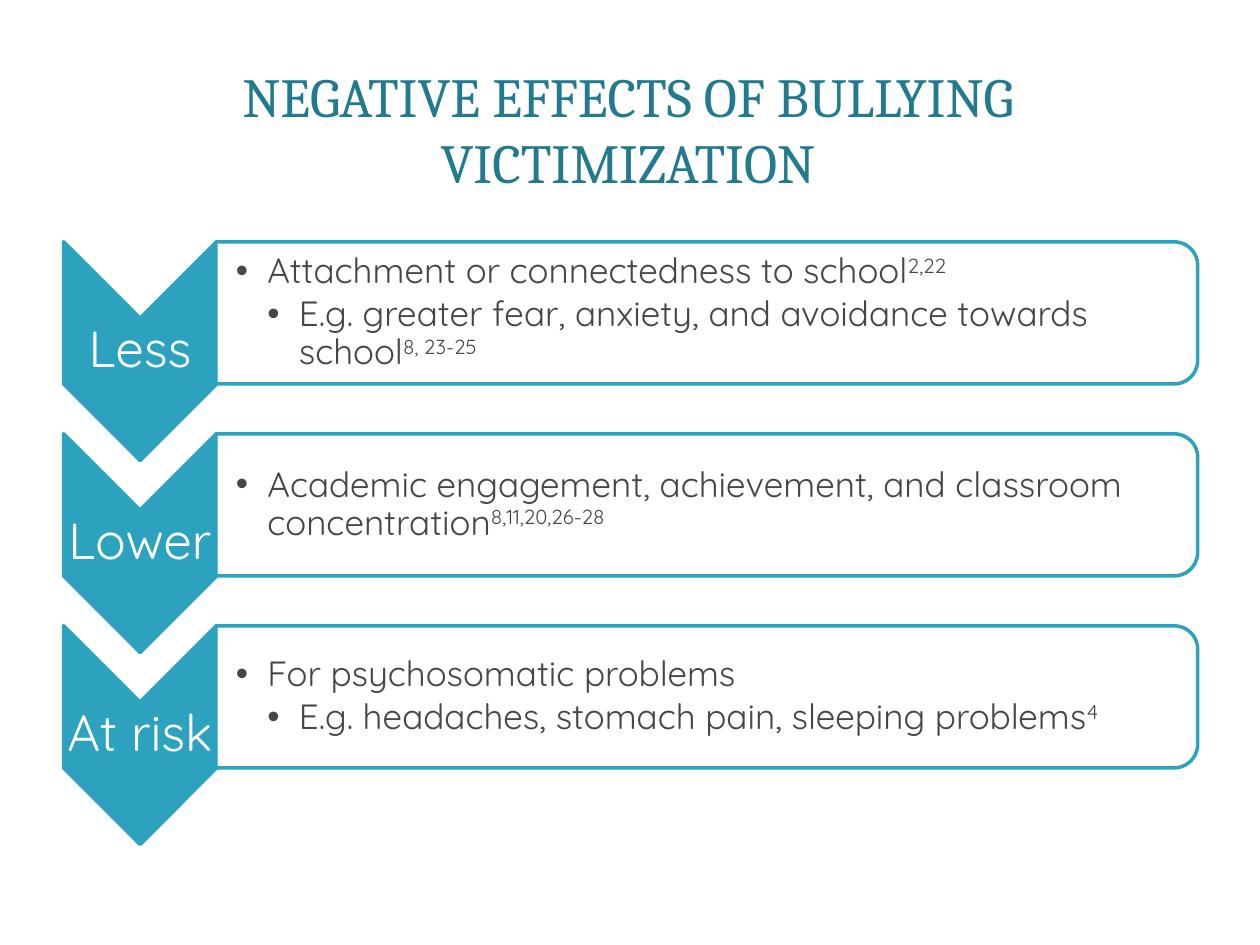
import pptx
import pptx.util
import pptx.oxml.ns
import pptx.dml.color
import pptx.enum.shapes
import pptx.enum.text
from lxml import etree

Pt = pptx.util.Pt
Shape = pptx.enum.shapes.MSO_SHAPE
Align = pptx.enum.text.PP_ALIGN
Anchor = pptx.enum.text.MSO_ANCHOR
qn = pptx.oxml.ns.qn

# Content: label, then (level, text, superscript reference)
TITLE = "NEGATIVE EFFECTS OF BULLYING VICTIMIZATION"
EFFECTS = [
    ("Less", [
        (1, "Attachment or connectedness to school", "2,22"),
        (2, "E.g. greater fear, anxiety, and avoidance towards school", "8, 23-25"),
    ]),
    ("Lower", [
        (1, "Academic engagement, achievement, and classroom concentration",
         "8,11,20,26-28"),
    ]),
    ("At risk", [
        (1, "For psychosomatic problems", ""),
        (2, "E.g. headaches, stomach pain, sleeping problems", "4"),
    ]),
]

THEME = {
    "accent": "2DA2BF", "title": "227A8F", "body": "464646", "white": "FFFFFF",
    "heading_font": "Cambria", "body_font": "Quicksand",
    "title_size": 31.5, "label_size": 29, "body_size": 20, "line": 2,
}

# Layout in points
ROW_TOP, ROW_PITCH = 138.2, 109.7
CHEVRON_LEFT, CHEVRON_WIDTH, CHEVRON_HEIGHT = 36.3, 87.4, 125
PANEL_LEFT, PANEL_WIDTH, PANEL_HEIGHT = 123.4, 561, 81.2
LABEL_OFFSET, LABEL_HEIGHT = 43.7, 37.6
TEXT_OFFSET, TEXT_WIDTH, TEXT_HEIGHT = 4, 556.8, 73.2
INDENT = 18


def color(name):
    return pptx.dml.color.RGBColor.from_string(THEME[name])


def style(span, font, size, tint):
    span.font.name = THEME[font]
    span.font.size = Pt(THEME[size])
    span.font.color.rgb = color(tint)


def add_turned_shape(page, kind, left, top, width, height, fill):
    """Add a shape turned a quarter, given the bounds seen on the page."""
    shift = (width - height) / 2
    shape = page.shapes.add_shape(
        kind, Pt(left + shift), Pt(top - shift), Pt(height), Pt(width))
    shape.rotation = 90
    shape.shadow.inherit = False
    shape.fill.solid()
    shape.fill.fore_color.rgb = color(fill)
    shape.line.color.rgb = color("accent")
    shape.line.width = Pt(THEME["line"])
    return shape


def add_text_frame(page, left, top, width, height, margins):
    box = page.shapes.add_textbox(Pt(left), Pt(top), Pt(width), Pt(height))
    frame = box.text_frame
    frame.word_wrap = True
    frame.vertical_anchor = Anchor.MIDDLE
    (frame.margin_left, frame.margin_top,
     frame.margin_right, frame.margin_bottom) = [Pt(m) for m in margins]
    return frame


def add_heading(frame, text, font, size, tint):
    frame.text = text
    para = frame.paragraphs[0]
    para.alignment = Align.CENTER
    style(para.runs[0], font, size, tint)
    return para


def add_bullet(para, level):
    para.level = level
    properties = para._p.get_or_add_pPr()
    properties.set("marL", str(Pt(INDENT * level)))
    properties.set("indent", str(-Pt(INDENT)))
    etree.SubElement(properties, qn("a:buFont"), typeface="Arial")
    etree.SubElement(properties, qn("a:buChar"), char="•")


def fill_points(frame, points):
    for index, (level, text, reference) in enumerate(points):
        para = frame.add_paragraph() if index else frame.paragraphs[0]
        para.line_spacing = 0.9
        para.space_after = Pt(3)
        add_bullet(para, level)
        for part, raised in ((text, False), (reference, True)):
            if part:
                span = para.add_run()
                span.text = part
                style(span, "body_font", "body_size", "body")
                if raised:
                    span.font._element.set("baseline", "30000")


def add_row(page, top, label, points):
    # Chevron and its label
    add_turned_shape(page, Shape.CHEVRON, CHEVRON_LEFT, top,
                     CHEVRON_WIDTH, CHEVRON_HEIGHT, "accent")
    frame = add_text_frame(page, CHEVRON_LEFT, top + LABEL_OFFSET,
                           CHEVRON_WIDTH, LABEL_HEIGHT, [1.44] * 4)
    para = add_heading(frame, label, "body_font", "label_size", "white")
    para.line_spacing = 0.9
    para.space_after = Pt(10)

    # Panel and its points
    panel = add_turned_shape(page, Shape.ROUND_2_SAME_RECTANGLE, PANEL_LEFT, top,
                             PANEL_WIDTH, PANEL_HEIGHT, "white")
    solid = panel.fill._xPr.find(qn("a:solidFill"))
    etree.SubElement(solid[0], qn("a:alpha"), val="90000")
    frame = add_text_frame(page, PANEL_LEFT, top + TEXT_OFFSET,
                           TEXT_WIDTH, TEXT_HEIGHT, (11.4, 0.9, 0.9, 0.9))
    fill_points(frame, points)


def main():
    deck = pptx.Presentation()
    deck.slide_width, deck.slide_height = Pt(720), Pt(540)
    page = deck.slides.add_slide(deck.slide_layouts[6])

    # Title
    frame = add_text_frame(page, 33.8, 32.4, 650, 82, (7.2, 3.6, 7.2, 3.6))
    add_heading(frame, TITLE, "heading_font", "title_size", "title")

    # Rows of effects
    for index, (label, points) in enumerate(EFFECTS):
        add_row(page, ROW_TOP + index * ROW_PITCH, label, points)

    deck.save("out.pptx")


if __name__ == "__main__":
    main()
